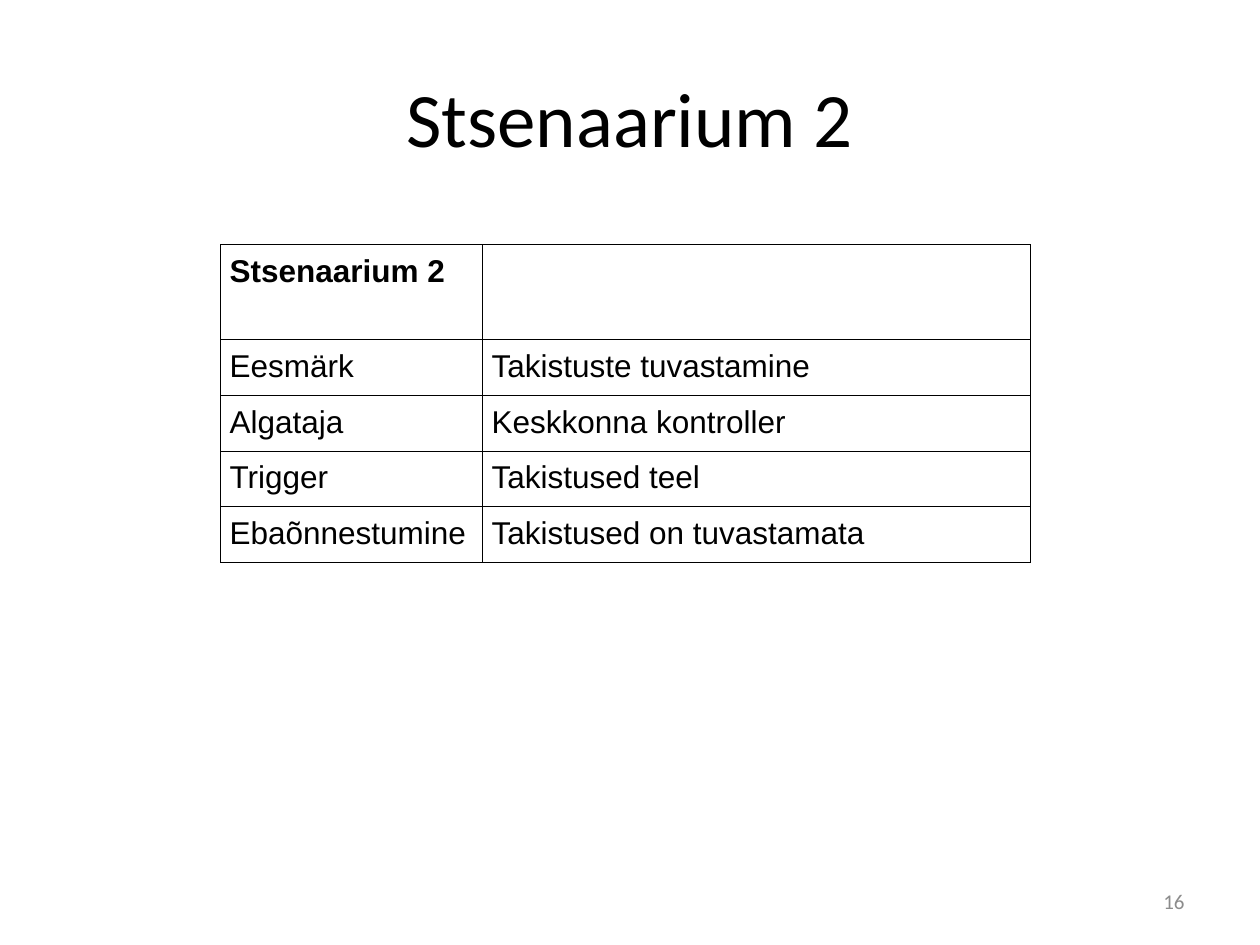
import pptx
import pptx.util
import pptx.dml.color
import pptx.enum.text
import pptx.oxml
import pptx.oxml.ns

Cm, Pt = pptx.util.Cm, pptx.util.Pt
Align = pptx.enum.text.PP_ALIGN
Anchor = pptx.enum.text.MSO_ANCHOR

TITLE = "Stsenaarium 2"
PAGE = "16"
ROWS = [
    ("Stsenaarium 2", ""),
    ("Eesmärk", "Takistuste tuvastamine"),
    ("Algataja", "Keskkonna kontroller"),
    ("Trigger", "Takistused teel"),
    ("Ebaõnnestumine", "Takistused on tuvastamata"),
]
COLORS = {"text": "000000", "border": "000000", "page": "8C8C8C"}
WIDTHS = (5.28, 11.05)
HEAD, ROW = 1.92, 1.08
INSET = 0.18


def style(para, face, size, color, bold=False):
    font = para.font
    font.name, font.size, font.bold = face, Pt(size), bold
    font.color.rgb = pptx.dml.color.RGBColor.from_string(COLORS[color])


def label(slide, text, box, size, color, align):
    frame = slide.shapes.add_textbox(*map(Cm, box)).text_frame
    frame.word_wrap = True
    frame.vertical_anchor = Anchor.MIDDLE
    para = frame.paragraphs[0]
    para.text, para.alignment = text, align
    style(para, "Calibri", size, color)


def border(cell):
    """Draw a thin line on all four sides; lines must precede the fill."""
    props = cell._tc.get_or_add_tcPr()
    for spot, side in enumerate(("lnL", "lnR", "lnT", "lnB")):
        props.insert(spot, pptx.oxml.parse_xml(
            f'<a:{side} {pptx.oxml.ns.nsdecls("a")} w="{Pt(0.75)}">'
            f'<a:solidFill><a:srgbClr val="{COLORS["border"]}"/></a:solidFill>'
            f'</a:{side}>'))


def grid(slide):
    high = HEAD + ROW * (len(ROWS) - 1)
    table = slide.shapes.add_table(
        len(ROWS), len(WIDTHS), Cm(4.45), Cm(4.93), Cm(sum(WIDTHS)), Cm(high)).table
    table.first_row = table.horz_banding = False
    for col, width in zip(table.columns, WIDTHS):
        col.width = Cm(width)
    for r, texts in enumerate(ROWS):
        table.rows[r].height = Cm(ROW if r else HEAD)
        for c, text in enumerate(texts):
            cell = table.cell(r, c)
            cell.margin_left = cell.margin_right = Cm(INSET)
            cell.margin_top = cell.margin_bottom = Cm(INSET)
            cell.fill.background()
            border(cell)
            para = cell.text_frame.paragraphs[0]
            para.text = text
            style(para, "Arial", 18, "text", bold=r == 0)


def main():
    deck = pptx.Presentation()
    deck.slide_width, deck.slide_height = Cm(25.4), Cm(19.05)
    slide = deck.slides.add_slide(deck.slide_layouts[6])
    label(slide, TITLE, (1.27, 0.76, 22.86, 3.18), 44, "text", Align.CENTER)
    grid(slide)
    label(slide, PAGE, (18.2, 17.66, 5.93, 1.01), 12, "page", Align.RIGHT)
    deck.save("out.pptx")


if __name__ == "__main__":
    main()
